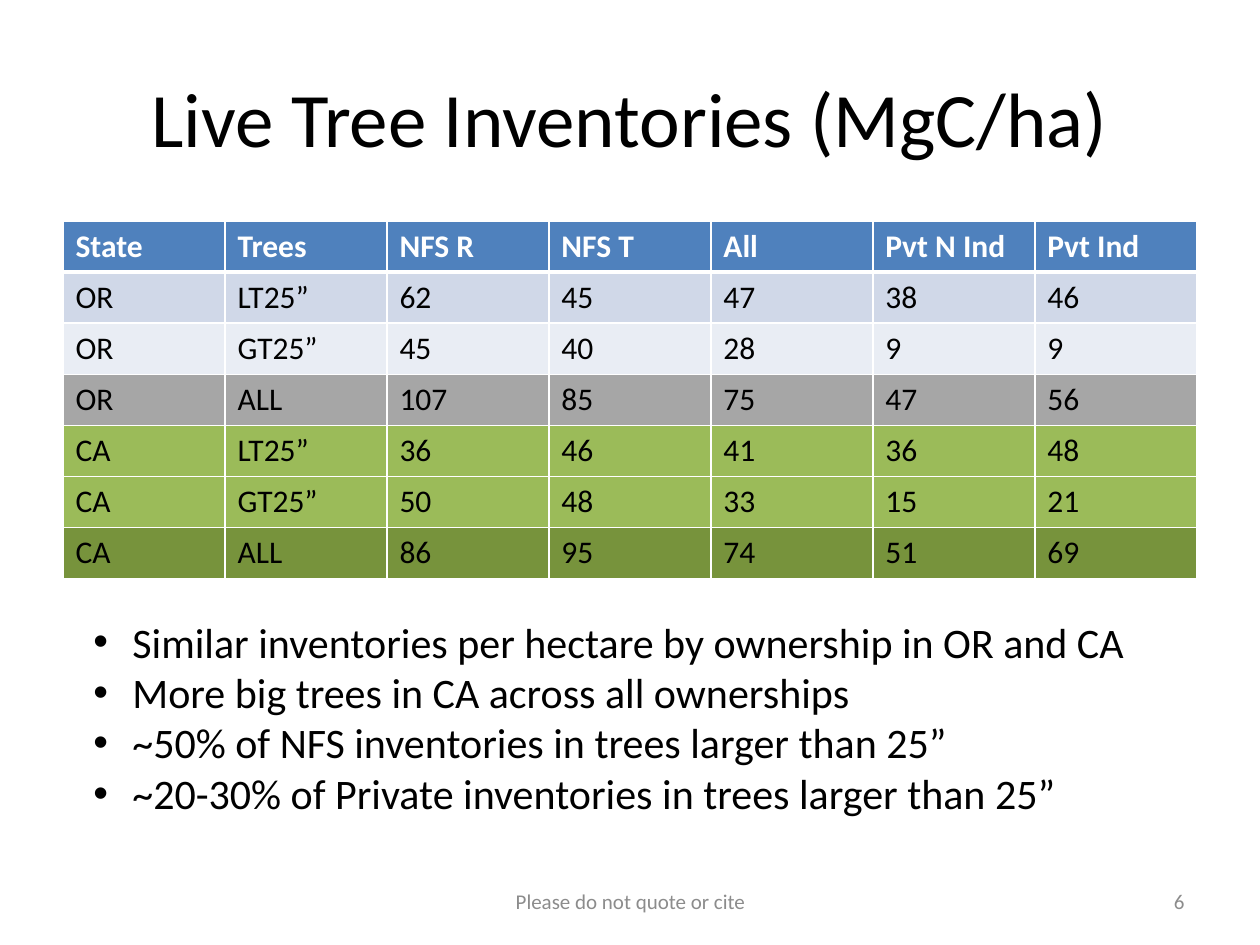
"""Build the live tree inventories slide with its table, findings and footer."""
from dataclasses import dataclass

from lxml import etree
from pptx import Presentation
from pptx.dml.color import RGBColor
from pptx.enum.text import MSO_ANCHOR, PP_ALIGN
from pptx.oxml.ns import qn
from pptx.util import Emu, Pt

LEFT, CENTER, RIGHT = PP_ALIGN.LEFT, PP_ALIGN.CENTER, PP_ALIGN.RIGHT
TOP, MIDDLE = MSO_ANCHOR.TOP, MSO_ANCHOR.MIDDLE
PX_PER_INCH = 126
TITLE_ONLY = 5


@dataclass(frozen=True)
class Theme:
    font: str = "Calibri"
    text: str = "000000"
    white: str = "FFFFFF"
    muted: str = "8C8C8C"
    header: str = "4F81BD"
    title_size: int = 44
    body_size: int = 24
    table_size: int = 18
    footer_size: int = 12
    border: int = 1
    header_border: int = 3


@dataclass(frozen=True)
class Box:
    left: int
    top: int
    width: int
    height: int

    def emu(self) -> tuple:
        return tuple(map(px, (self.left, self.top, self.width, self.height)))


@dataclass(frozen=True)
class Row:
    fill: str
    values: tuple


@dataclass(frozen=True)
class TextBlock:
    box: Box
    lines: tuple
    size: int
    color: str
    align: PP_ALIGN = LEFT
    anchor: MSO_ANCHOR = TOP
    indent: int = 0


THEME = Theme()
TITLE = TextBlock(Box(63, 38, 1134, 158), ("Live Tree Inventories (MgC/ha)",),
                  THEME.title_size, THEME.text, CENTER, MIDDLE)
TABLE_BOX = Box(63, 221, 1134, 357)
ROWS = (
    Row(THEME.header, ("State", "Trees", "NFS R", "NFS T", "All", "Pvt N Ind", "Pvt Ind")),
    Row("D0D8E8", ("OR", "LT25”", 62, 45, 47, 38, 46)),
    Row("E9EDF4", ("OR", "GT25”", 45, 40, 28, 9, 9)),
    Row("A6A6A6", ("OR", "ALL", 107, 85, 75, 47, 56)),
    Row("9BBB59", ("CA", "LT25”", 36, 46, 41, 36, 48)),
    Row("9BBB59", ("CA", "GT25”", 50, 48, 33, 15, 21)),
    Row("77933C", ("CA", "ALL", 86, 95, 74, 51, 69)),
)
TEXT_BLOCKS = (
    TextBlock(Box(81, 610, 1101, 255), (
        "Similar inventories per hectare by ownership in OR and CA",
        "More big trees in CA across all ownerships",
        "~50% of NFS inventories in trees larger than 25”",
        "~20-30% of Private inventories in trees larger than 25”",
    ), THEME.body_size, THEME.text, indent=39),
    TextBlock(Box(431, 876, 399, 50), ("Please do not quote or cite",),
              THEME.footer_size, THEME.muted, CENTER, MIDDLE),
    TextBlock(Box(903, 876, 294, 50), ("6",),
              THEME.footer_size, THEME.muted, RIGHT, MIDDLE),
)


def px(length: int) -> Emu:
    return Emu(round(length * 914400 / PX_PER_INCH))


def add_run(paragraph, text: str, size: int, color: str, bold: bool = False) -> None:
    run = paragraph.add_run()
    run.text = text
    run.font.name = THEME.font
    run.font.size = Pt(size)
    run.font.bold = bold
    run.font.color.rgb = RGBColor.from_string(color)


def set_bullet(paragraph, indent: int) -> None:
    properties = paragraph._p.get_or_add_pPr()
    properties.set("marL", str(px(indent)))
    properties.set("indent", str(-px(indent)))
    etree.SubElement(properties, qn("a:buFont"), typeface="Arial")
    etree.SubElement(properties, qn("a:buChar"), char="•")


def write_text(shape, block: TextBlock) -> None:
    shape.left, shape.top, shape.width, shape.height = block.box.emu()
    frame = shape.text_frame
    frame.word_wrap = True
    frame.vertical_anchor = block.anchor
    for index, line in enumerate(block.lines):
        paragraph = frame.add_paragraph() if index else frame.paragraphs[0]
        paragraph.alignment = block.align
        if block.indent:
            set_bullet(paragraph, block.indent)
        add_run(paragraph, line, block.size, block.color)


def set_borders(cell, top: int, bottom: int) -> None:
    properties = cell._tc.get_or_add_tcPr()
    widths = {"L": THEME.border, "R": THEME.border, "T": top, "B": bottom}
    for side, width in widths.items():
        line = etree.SubElement(properties, qn(f"a:ln{side}"), w=str(Pt(width)))
        fill = etree.SubElement(line, qn("a:solidFill"))
        etree.SubElement(fill, qn("a:srgbClr"), val=THEME.white)


def add_inventory_table(slide, box: Box, rows: tuple) -> None:
    column_count = len(rows[0].values)
    table = slide.shapes.add_table(len(rows), column_count, *box.emu()).table
    for column in table.columns:
        column.width = px(box.width // column_count)
    for row_index, row in enumerate(rows):
        table.rows[row_index].height = px(box.height // len(rows))
        is_header = row_index == 0
        top = THEME.header_border if row_index == 1 else THEME.border
        bottom = THEME.header_border if is_header else THEME.border
        for column_index, value in enumerate(row.values):
            cell = table.cell(row_index, column_index)
            set_borders(cell, top, bottom)
            cell.fill.solid()
            cell.fill.fore_color.rgb = RGBColor.from_string(row.fill)
            add_run(cell.text_frame.paragraphs[0], str(value), THEME.table_size,
                    THEME.white if is_header else THEME.text, is_header)


def main() -> None:
    presentation = Presentation()
    presentation.slide_width, presentation.slide_height = px(1260), px(945)
    slide = presentation.slides.add_slide(presentation.slide_layouts[TITLE_ONLY])
    write_text(slide.shapes.title, TITLE)
    add_inventory_table(slide, TABLE_BOX, ROWS)
    for block in TEXT_BLOCKS:
        write_text(slide.shapes.add_textbox(*block.box.emu()), block)
    presentation.save("out.pptx")


if __name__ == "__main__":
    main()
